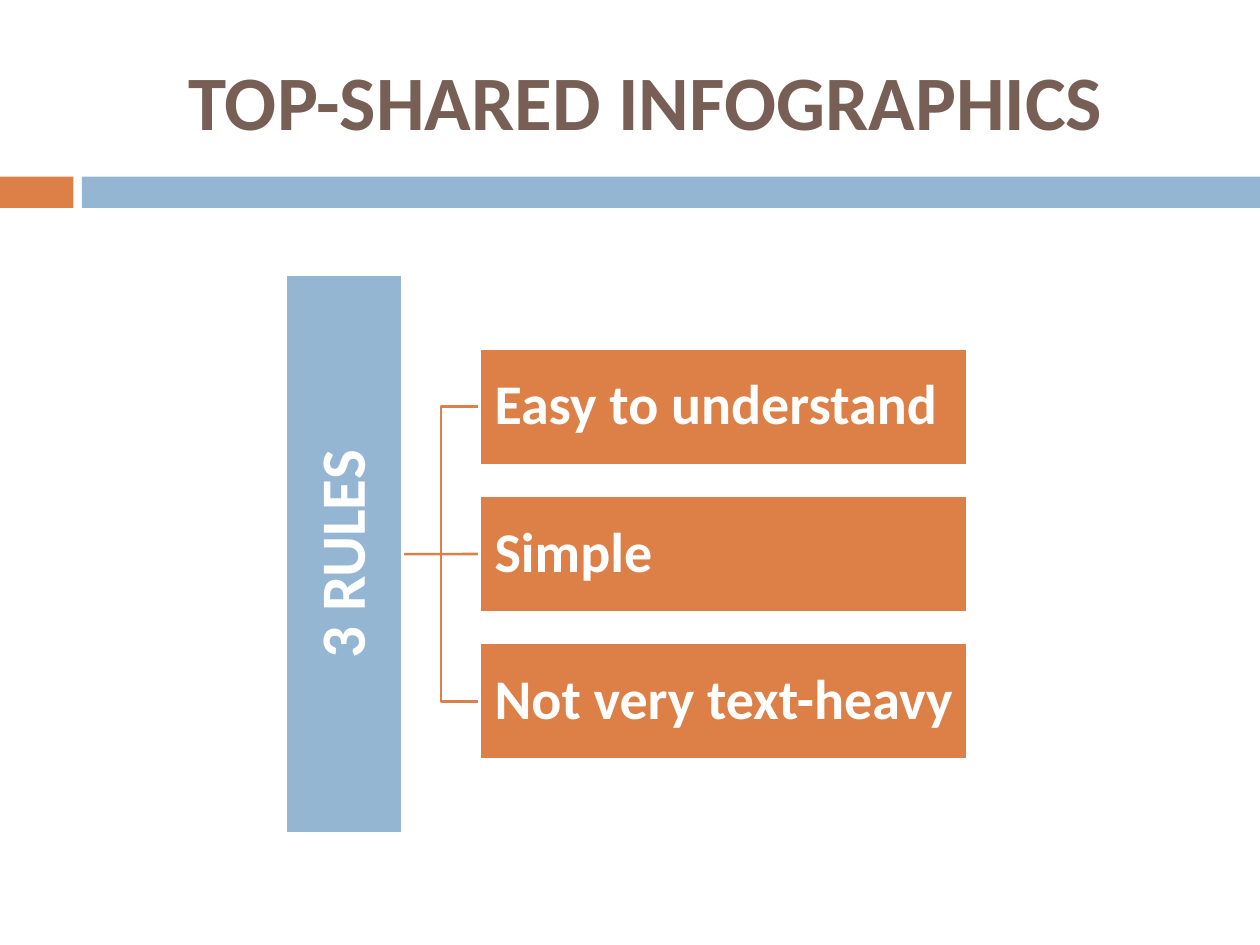
from dataclasses import dataclass

from lxml import etree
from pptx import Presentation
from pptx.dml.color import RGBColor
from pptx.enum import shapes, text
from pptx.oxml.ns import qn
from pptx.util import Cm, Pt


@dataclass(frozen=True)
class Theme:
    font: str = "Calibri"
    blue: str = "94B6D2"
    orange: str = "DD8047"
    brown: str = "775F55"
    white: str = "FFFFFF"
    title: int = 44
    head: int = 36
    item: int = 32
    line: float = 1.5


THEME = Theme()
RULES = ["Easy to understand", "Simple", "Not very text-heavy"]


def rgb(code):
    return RGBColor.from_string(code)


def write(shape, words, size, color=THEME.white, align=text.PP_ALIGN.CENTER,
          space=1.0, pad=0.05, left=None):
    """Fill a shape with one bold paragraph; pad and left are insets in cm."""
    frame = shape.text_frame
    frame.word_wrap = True
    frame.vertical_anchor = text.MSO_ANCHOR.MIDDLE
    frame.margin_top = frame.margin_right = frame.margin_bottom = Cm(pad)
    frame.margin_left = Cm(pad if left is None else left)
    para = frame.paragraphs[0]
    para.alignment = align
    para.line_spacing = space
    run = para.add_run()
    run.text = words
    run.font.name = THEME.font
    run.font.size = Pt(size)
    run.font.bold = True
    run.font.color.rgb = rgb(color)


def block(slide, x, y, w, h, fill, line=None):
    rect = slide.shapes.add_shape(
        shapes.MSO_SHAPE.RECTANGLE, Cm(x), Cm(y), Cm(w), Cm(h))
    rect.shadow.inherit = False
    rect.fill.solid()
    rect.fill.fore_color.rgb = rgb(fill)
    if line:
        rect.line.color.rgb = rgb(line)
        rect.line.width = Pt(THEME.line)
    else:
        rect.line.fill.background()
    return rect


def link(slide, kind, x1, y1, x2, y2):
    wire = slide.shapes.add_connector(kind, Cm(x1), Cm(y1), Cm(x2), Cm(y2))
    wire.line.color.rgb = rgb(THEME.orange)
    wire.line.width = Pt(THEME.line)
    etree.SubElement(wire._element.spPr, qn("a:effectLst"))
    return wire


def banner(slide, x, y, w, h, stub=1.48, gap=0.17):
    block(slide, x, y, stub, h, THEME.orange)
    start = stub + gap
    block(slide, x + start, y, w - start, h, THEME.blue)


def title(slide, x, y, w, h):
    box = slide.shapes.add_textbox(Cm(x), Cm(y), Cm(w), Cm(h))
    write(box, "TOP-SHARED INFOGRAPHICS", THEME.title, THEME.brown)


def tree(slide, x, y, w, h, side=2.35, gap=0.62, arm=1.55):
    """Draw an upright header that branches to a centred stack of rules."""
    mid = y + h / 2
    left = x + side + arm
    step = side + gap
    tops = [mid - side / 2 + (i - (len(RULES) - 1) / 2) * step
            for i in range(len(RULES))]

    # The links come first so that the white box outlines cover their ends.
    wires = []
    for top in tops:
        level = abs(top + side / 2 - mid) < 0.01
        kind = shapes.MSO_CONNECTOR.STRAIGHT if level else shapes.MSO_CONNECTOR.ELBOW
        wires.append(link(slide, kind, x + side, mid, left, top + side / 2))

    root = block(slide, x, y, side, h, THEME.blue, THEME.white)
    write(root, "3 RULES", THEME.head, space=0.9)
    root.text_frame._txBody.bodyPr.set("vert", "vert270")

    for rule, top, wire in zip(RULES, tops, wires):
        card = block(slide, left, top, w - side - arm, side,
                     THEME.orange, THEME.white)
        write(card, rule, THEME.item, align=text.PP_ALIGN.JUSTIFY,
              space=0.9, left=0.3)
        wire.begin_connect(root, 3)
        wire.end_connect(card, 1)


def main():
    deck = Presentation()
    deck.slide_width, deck.slide_height = Cm(25.4), Cm(19.05)
    slide = deck.slides.add_slide(deck.slide_layouts[6])
    banner(slide, 0, 3.56, 25.4, 0.63)
    title(slide, 1.7, 0.64, 22.66, 2.74)
    tree(slide, 5.77, 5.54, 13.73, 11.26)
    deck.save("out.pptx")


if __name__ == "__main__":
    main()
